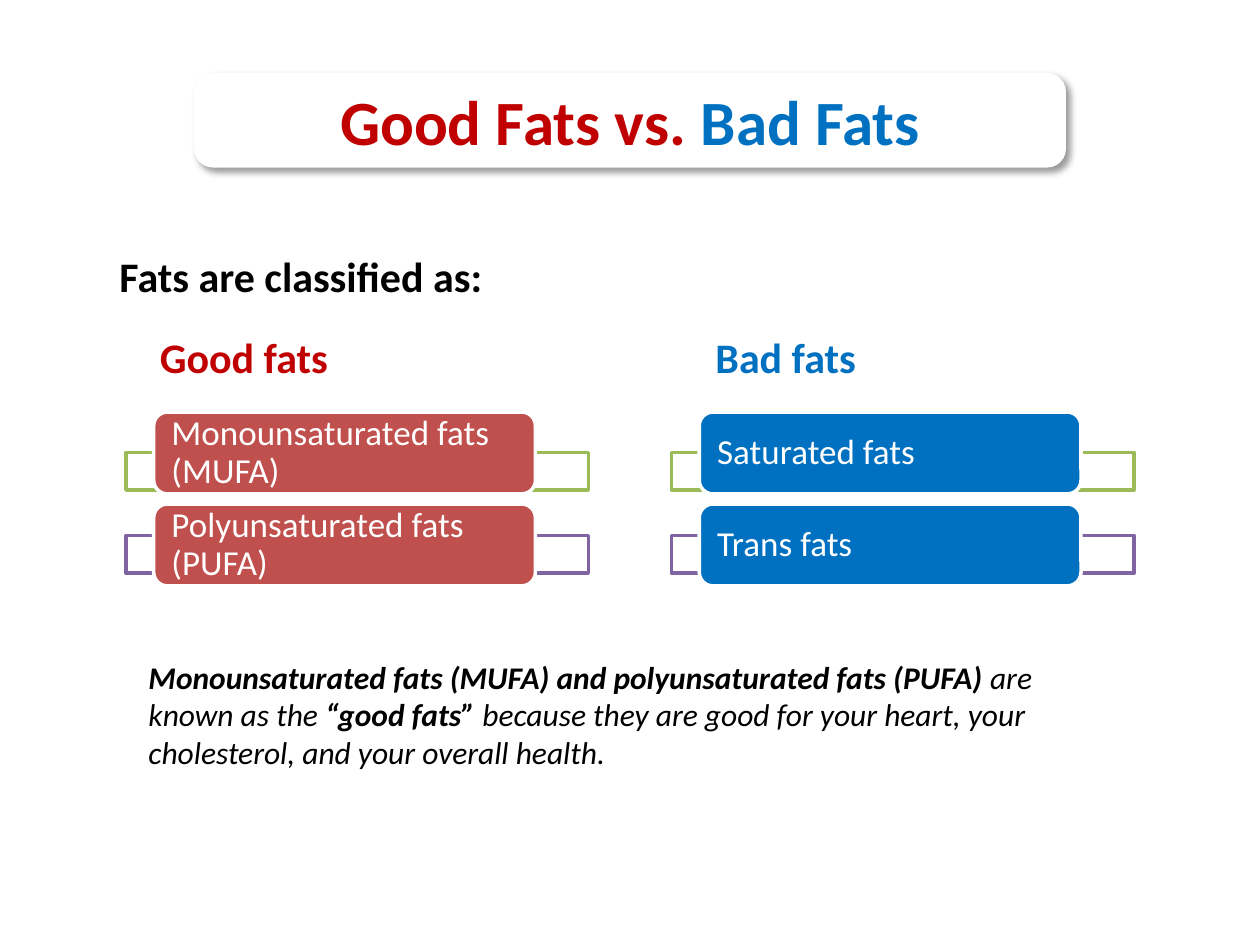
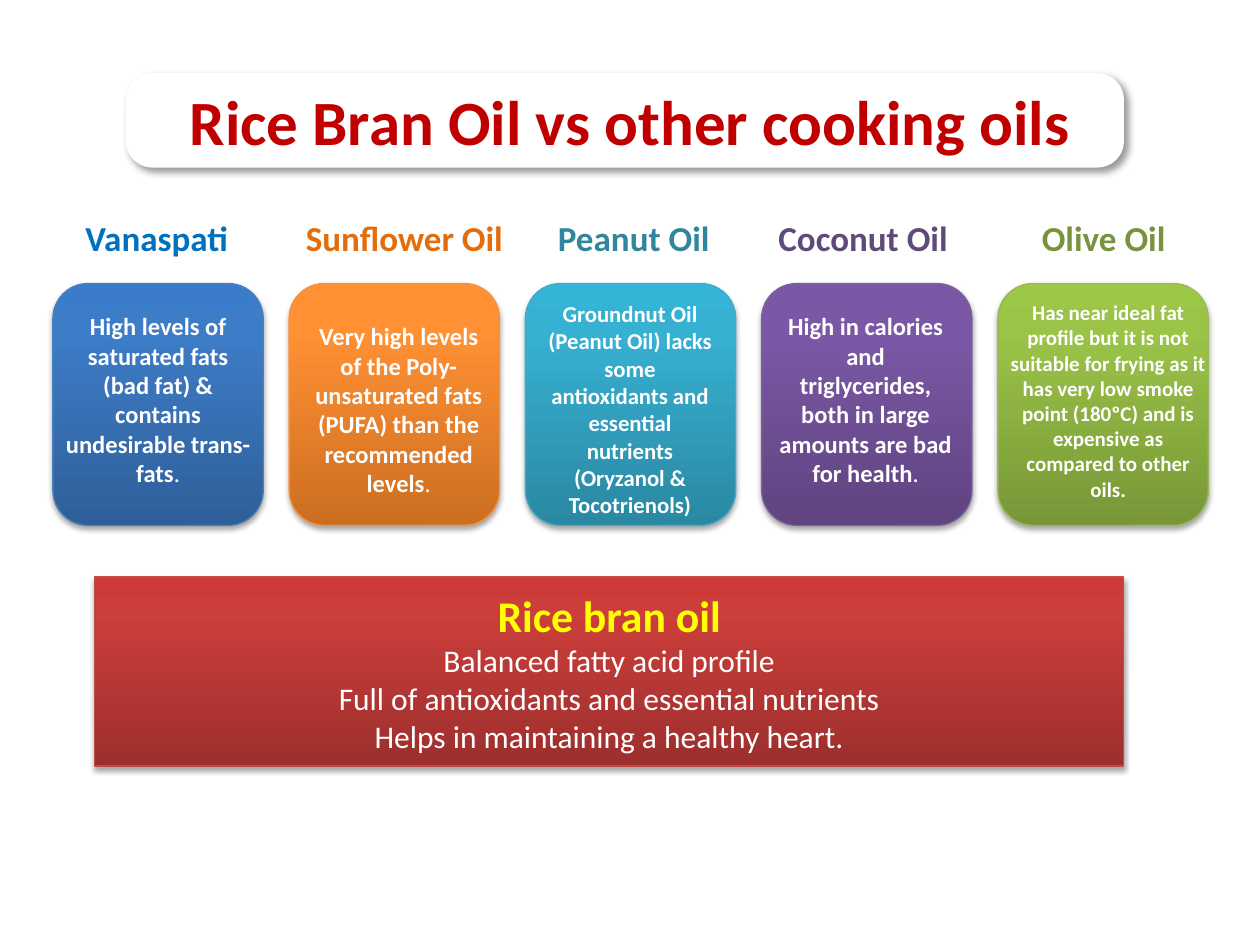
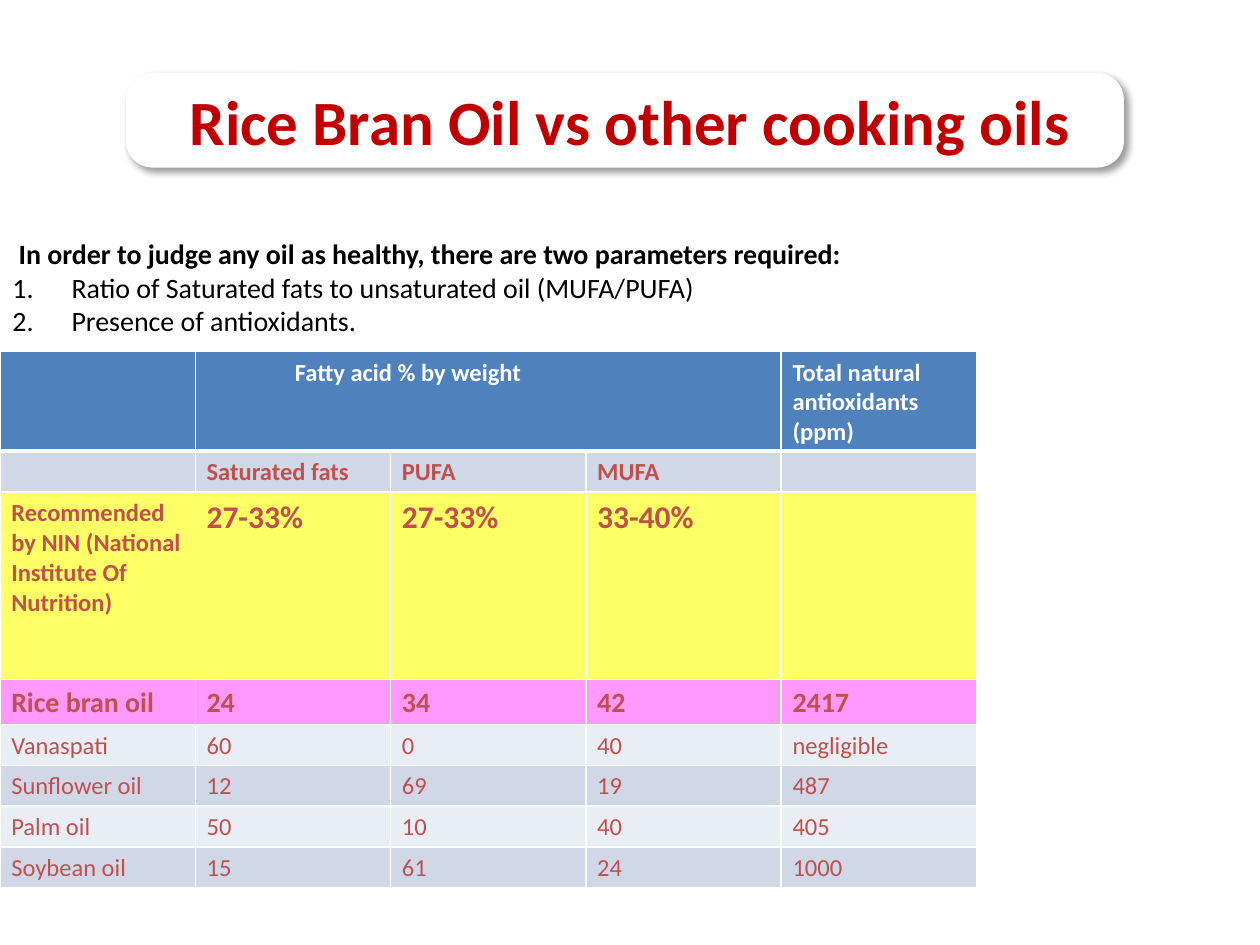
from copy import deepcopy

from lxml import etree
from pptx import Presentation
from pptx.dml.color import RGBColor
from pptx.enum import shapes, text
from pptx.oxml.ns import qn
from pptx.util import Inches, Pt

FONT = "Calibri"
WHITE = RGBColor(0xFF, 0xFF, 0xFF)
BLACK = RGBColor(0, 0, 0)
RED = RGBColor(0xC0, 0x00, 0x00)
BLUE = RGBColor(0x00, 0x70, 0xC0)
BRICK = RGBColor(0xC0, 0x50, 0x4D)
GREEN = RGBColor(0x9B, 0xBB, 0x59)
PURPLE = RGBColor(0x80, 0x64, 0xA2)
BRIGHT_YELLOW = RGBColor(0xFF, 0xFF, 0x00)
HEADER_BLUE = RGBColor(0x4F, 0x81, 0xBD)
BAND_DARK = RGBColor(0xD0, 0xD8, 0xE8)
BAND_LIGHT = RGBColor(0xE9, 0xED, 0xF4)
YELLOW = RGBColor(0xFF, 0xFF, 0x66)
PINK = RGBColor(0xFF, 0x99, 0xFF)

LEFT, CENTER = text.PP_ALIGN.LEFT, text.PP_ALIGN.CENTER
RECT = shapes.MSO_SHAPE.RECTANGLE
ROUNDED = shapes.MSO_SHAPE.ROUNDED_RECTANGLE

# Shadows: opacity %, blur pt, distance pt, direction degrees
TITLE_SHADOW = (40, 4, 3, 45)
CARD_SHADOW = (35, 3.1, 1.8, 90)

# Paragraphs are strings, or lists of (text, font overrides) runs.
FATS_TITLE = [("Good Fats vs. ", {}), ("Bad Fats", {"color": BLUE})]
OILS_TITLE = "Rice Bran Oil vs other cooking oils"

# heading, heading left, heading colour, card colour, group left, kinds
FAT_GROUPS = [
    ("Good fats", 1.17, RED, BRICK, 1,
     ["Monounsaturated fats (MUFA)", "Polyunsaturated fats (PUFA)"]),
    ("Bad fats", 5.58, BLUE, BLUE, 5.33, ["Saturated fats", "Trans fats"]),
]
# frame top, frame colour
FAT_FRAMES = [(3.59, GREEN), (4.25, PURPLE)]
GOOD_FATS_NOTE = [
    ("Monounsaturated fats (MUFA) and polyunsaturated fats (PUFA)", {"bold": True}),
    (" are known as the ", {}),
    ("“good fats”", {"bold": True}),
    (" because they are good for your heart, your cholesterol, and your overall health.", {}),
]

# name, name left, name colour, gradient from bottom to top, outline,
# (text left, top, width), text size, text, closing mark
OILS = [
    ("Vanaspati", 0.58, "0070C0", ("2F5F99", "3D7CC7", "3A7CCB"), "4B7EBC",
     (0.42, 2.42, 1.67), 14,
     "High levels of saturated fats (bad fat) & contains undesirable trans-fats", "."),
    ("Sunflower Oil", 2.33, "E46C0A", ("CC6E20", "FF9034", "FF9136"), "F69240",
     (2.33, 2.5, 1.67), 14,
     "Very high levels of the Poly-unsaturated fats (PUFA) than the recommended levels", "."),
    ("Peanut Oil", 4.33, "31859C", ("2A88A2", "37B1D2", "34B4D6"), "46AAC5",
     (4.25, 2.33, 1.5), 13,
     "Groundnut Oil (Peanut Oil) lacks some antioxidants and essential nutrients "
     "(Oryzanol & Tocotrienols)", ""),
    ("Coconut Oil", 6.08, "604A7B", ("5F4480", "7B58A6", "7C57A8"), "7D60A0",
     (6.08, 2.42, 1.58), 14,
     "High in calories and triglycerides, both in large amounts are bad for health", "."),
    ("Olive Oil", 8.17, "77933C", ("779737", "9BC348", "9DC746"), "98B955",
     (7.92, 2.33, 1.75), 12,
     "Has near ideal fat profile but it is not suitable for frying as it has very low "
     "smoke point (180ºC) and is expensive as compared to other oils.", ""),
]
SUMMARY = [
    [("Rice bran oil", {"size": Pt(25), "bold": True, "color": BRIGHT_YELLOW})],
    "Balanced fatty acid profile",
    "Full of antioxidants and essential nutrients",
    "Helps in maintaining a healthy heart.",
]
SUMMARY_GRADIENT = ("9C2F2D", "CB3E3A", "CE3B37")

PARAMETERS = [
    [("In order to judge any oil as healthy, there are two parameters required:",
      {"bold": True})],
    "Ratio of Saturated fats to unsaturated oil (MUFA/PUFA)",
    "Presence of antioxidants.",
]
# height, fill, text colour, bold, sizes of first and other cells, cells
OIL_TABLE = [
    (0.79, HEADER_BLUE, WHITE, True, (14, 14),
     ("", "Fatty acid % by weight", "", "", "Total natural antioxidants (ppm)")),
    (0.31, BAND_DARK, BRICK, True, (14, 14), ("", "Saturated fats", "PUFA", "MUFA", "")),
    (1.49, YELLOW, BRICK, True, (14, 18),
     ("Recommended by NIN (National Institute Of Nutrition)",
      "27-33%", "27-33%", "33-40%", "")),
    (0.31, PINK, BRICK, True, (16, 16), ("Rice bran oil", "24", "34", "42", "2417")),
    (0.31, BAND_LIGHT, BRICK, False, (14, 14), ("Vanaspati", "60", "0", "40", "negligible")),
    (0.31, BAND_DARK, BRICK, False, (14, 14), ("Sunflower oil", "12", "69", "19", "487")),
    (0.31, BAND_LIGHT, BRICK, False, (14, 14), ("Palm oil", "50", "10", "40", "405")),
    (0.31, BAND_DARK, BRICK, False, (14, 14), ("Soybean oil", "15", "61", "24", "1000")),
]
COLUMN_WIDTH = 1.55


def style_font(font, color=None, **settings):
    if color is not None:
        font.color.rgb = color
    for name, value in settings.items():
        setattr(font, name, value)


def number_below_lead(paragraph, index):
    """Indent the lead line slightly and number the paragraphs after it."""
    properties = paragraph._p.get_or_add_pPr()
    if index == 0:
        properties.set("marL", str(Inches(0.05)))
    else:
        properties.set("marL", str(Inches(0.47)))
        properties.set("indent", str(Inches(-0.47)))
        etree.SubElement(properties, qn("a:buAutoNum"), type="arabicPeriod")


def write(frame, paragraphs, size, color, align=LEFT, bold=False, italic=False, prepare=None):
    """Fill a text frame and return its paragraphs."""
    for index, content in enumerate(paragraphs):
        paragraph = frame.paragraphs[0] if index == 0 else frame.add_paragraph()
        paragraph.alignment = align
        if prepare:
            prepare(paragraph, index)
        style_font(paragraph.font, color, name=FONT, size=Pt(size), bold=bold, italic=italic)
        runs = [(content, {})] if isinstance(content, str) else content
        for words, overrides in runs:
            if words:
                run = paragraph.add_run()
                run.text = words
                style_font(run.font, **overrides)
    return frame.paragraphs


def add_text(slide, place, paragraphs, size, color, wrap=True,
             anchor=text.MSO_ANCHOR.TOP, **look):
    frame = slide.shapes.add_textbox(*map(Inches, place)).text_frame
    frame.word_wrap = wrap
    frame.vertical_anchor = anchor
    write(frame, paragraphs, size, color, **look)


def add_box(slide, kind, place, fill, line=None, line_width=2.0, shadow=None):
    """Add a shape; fill is one colour or three hex gradient stops."""
    box = slide.shapes.add_shape(kind, *map(Inches, place))
    if isinstance(fill, RGBColor):
        box.fill.solid()
        box.fill.fore_color.rgb = fill
    else:
        box.fill.gradient()
        box.fill.gradient_angle = 90
        stops = box._element.spPr.find(".//" + qn("a:gsLst"))
        stops.insert(1, deepcopy(stops[0]))
        for stop, position, color in zip(box.fill.gradient_stops, (0, 0.8, 1), fill):
            stop.position = position
            stop.color.rgb = RGBColor.from_string(color)
    if line is None:
        box.line.fill.background()
    else:
        box.line.color.rgb = line
        box.line.width = Pt(line_width)
    box.shadow.inherit = False
    if shadow:
        opacity, blur, distance, direction = shadow
        effects = box._element.spPr.find(qn("a:effectLst"))
        outer = etree.SubElement(
            effects, qn("a:outerShdw"), blurRad=str(Pt(blur)), dist=str(Pt(distance)),
            dir=str(direction * 60000), algn="ctr", rotWithShape="0")
        black = etree.SubElement(outer, qn("a:srgbClr"), val="000000")
        etree.SubElement(black, qn("a:alpha"), val=str(opacity * 1000))
    return box


def add_title(slide, title, left=1, width=7.92, rounding=0.28):
    bar = add_box(slide, ROUNDED, (left, 0.58, width, 0.75), WHITE, shadow=TITLE_SHADOW)
    bar.adjustments[0] = rounding
    add_text(slide, (0.5, 0.33, 9, 1.25), [title], 36, RED, align=CENTER, bold=True,
             anchor=text.MSO_ANCHOR.MIDDLE)


def build_fat_kinds(slide):
    add_title(slide, FATS_TITLE, left=1.54, width=6.92, rounding=0.2)
    add_text(slide, (0.85, 1.94, 3.1, 0.5), ["Fats are classified as:"], 24, BLACK,
             wrap=False, bold=True)
    for heading, heading_left, heading_color, card_color, left, kinds in FAT_GROUPS:
        add_text(slide, (heading_left, 2.58, 3.25, 0.5), [heading], 24, heading_color, bold=True)
        for row, (kind, (frame_top, frame_color)) in enumerate(zip(kinds, FAT_FRAMES)):
            add_box(slide, RECT, (left, frame_top, 3.67, 0.3), WHITE, frame_color)
            card = add_box(slide, ROUNDED, (left + 0.22, 3.27 + 0.73 * row, 3.03, 0.65),
                           card_color, WHITE)
            frame = card.text_frame
            frame.margin_left = frame.margin_right = Inches(0.11)
            frame.margin_top = frame.margin_bottom = 0
            write(frame, [kind], 20, WHITE)[0].line_spacing = 0.9
    add_text(slide, (1.08, 5.17, 7.92, 1.01), [GOOD_FATS_NOTE], 18, BLACK, italic=True)


def build_oil_cards(slide):
    add_title(slide, OILS_TITLE)
    summary = add_box(slide, RECT, (0.75, 4.58, 8.17, 1.5), SUMMARY_GRADIENT,
                      RGBColor(0xBF, 0x4C, 0x48), 0.75, CARD_SHADOW)
    write(summary.text_frame, SUMMARY, 18, WHITE, align=CENTER)
    for column, oil in enumerate(OILS):
        name, name_left, name_color, gradient, outline, place, size, words, mark = oil
        add_box(slide, ROUNDED, (0.42 + 1.875 * column, 2.25, 1.67, 1.92), gradient,
                RGBColor.from_string(outline), 0.75, CARD_SHADOW)
        add_text(slide, (name_left, 1.67, 1.8, 0.44), [name], 20,
                 RGBColor.from_string(name_color), wrap=False, bold=True)
        add_text(slide, (*place, 1.5), [[(words, {"bold": True}), (mark, {})]], size, WHITE,
                 align=CENTER)


def add_border(cell, side, width):
    line = etree.Element(qn("a:ln" + side), w=str(Pt(width)))
    fill = etree.SubElement(line, qn("a:solidFill"))
    etree.SubElement(fill, qn("a:srgbClr"), val=str(WHITE))
    cell._tc.get_or_add_tcPr().append(line)


def add_oil_table(slide):
    columns = len(OIL_TABLE[0][-1])
    table = slide.shapes.add_table(
        len(OIL_TABLE), columns, 0, Inches(2.79), Inches(COLUMN_WIDTH * columns),
        Inches(sum(row[0] for row in OIL_TABLE))).table
    table.first_row = table.horz_banding = False
    for column in table.columns:
        column.width = Inches(COLUMN_WIDTH)
    for r, (height, fill, color, bold, sizes, values) in enumerate(OIL_TABLE):
        table.rows[r].height = Inches(height)
        for c, value in enumerate(values):
            cell = table.cell(r, c)
            cell.margin_left = cell.margin_right = Inches(0.09)
            cell.margin_top, cell.margin_bottom = Inches(0.05), Inches(0.04)
            for side in "LRTB":
                under_header = (r, side) in ((0, "B"), (1, "T"))
                add_border(cell, side, 3 if under_header else 1)
            cell.fill.solid()
            cell.fill.fore_color.rgb = fill
            write(cell.text_frame, [value], sizes[min(c, 1)], color, bold=bold)
    table.cell(0, 1).merge(table.cell(0, 3))
    table.cell(0, 1).margin_left = Inches(0.79)


def build_oil_values(slide):
    add_text(slide, (0, 1.83, 9, 0.9), PARAMETERS, 16, BLACK, prepare=number_below_lead)
    add_oil_table(slide)
    add_title(slide, OILS_TITLE)


def main():
    deck = Presentation()
    deck.slide_width, deck.slide_height = Inches(10), Inches(7.5)
    for build in (build_fat_kinds, build_oil_cards, build_oil_values):
        build(deck.slides.add_slide(deck.slide_layouts[6]))
    deck.save("out.pptx")


if __name__ == "__main__":
    main()
